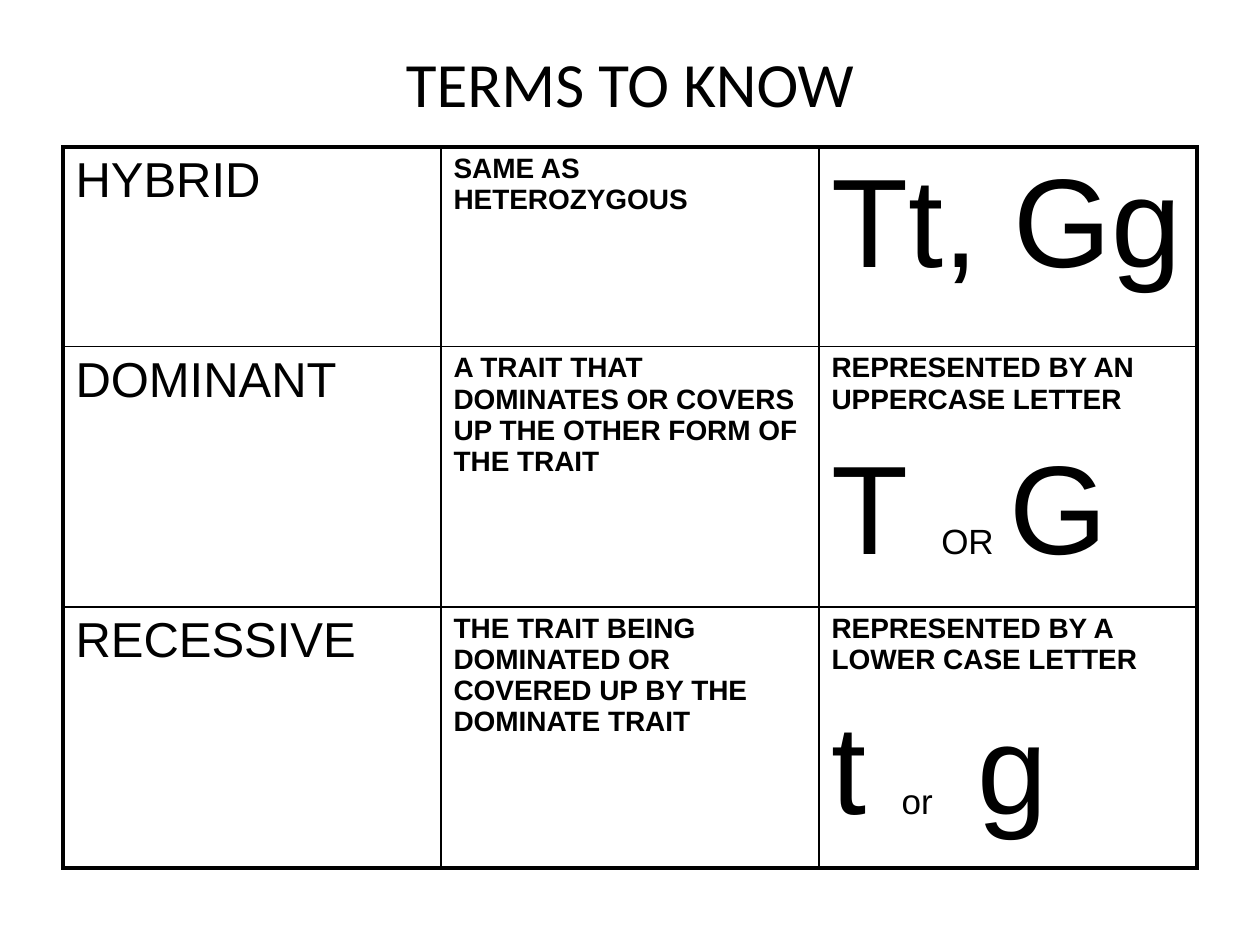
from lxml.etree import fromstring
from pptx import Presentation
from pptx.dml.color import RGBColor
from pptx.enum.text import MSO_ANCHOR, PP_ALIGN
from pptx.oxml.ns import nsdecls
from pptx.util import Pt

COLORS = {"text": "000000", "border": "000000"}
OUTER, INNER = 2.25, 1
TERM = {"size": 28}
MEANING = {"size": 16, "bold": True}
LETTER = {"size": 72}
JOINER = {"size": 20}

# Each cell is a list of paragraphs, each paragraph a list of (text, format).
TERMS = [
    [
        [[("HYBRID", TERM)]],
        [[("SAME AS HETEROZYGOUS", MEANING)]],
        [[("Tt, Gg", LETTER)]],
    ],
    [
        [[("DOMINANT", TERM)]],
        [[("A TRAIT THAT DOMINATES OR COVERS UP THE OTHER FORM OF THE TRAIT", MEANING)]],
        [
            [("REPRESENTED BY AN UPPERCASE LETTER", MEANING)],
            [("T ", LETTER), ("OR", JOINER), (" ", {"size": 32}), ("G", LETTER)],
        ],
    ],
    [
        [[("RECESSIVE", TERM)]],
        [[("THE TRAIT BEING DOMINATED OR COVERED UP BY THE DOMINATE TRAIT", MEANING)]],
        [
            [("REPRESENTED BY A LOWER CASE LETTER", MEANING)],
            [("t ", LETTER), ("or", JOINER), (" ", {"size": 72, "tracking": 5.6}), ("g", LETTER)],
        ],
    ],
]


def add_text(paragraph, text, *, size, font="Arial", bold=False, tracking=0):
    """Append a formatted run; tracking is extra letter spacing in points."""
    run = paragraph.add_run()
    run.text = text
    run.font.name = font
    run.font.size = Pt(size)
    run.font.bold = bold
    run.font.color.rgb = RGBColor.from_string(COLORS["text"])
    if tracking:
        run._r.get_or_add_rPr().set("spc", str(round(tracking * 100)))


def set_borders(cell, widths):
    """Draw the left, right, top and bottom borders, in that order."""
    properties = cell._tc.get_or_add_tcPr()
    for position, (side, width) in enumerate(zip("LRTB", widths)):
        properties.insert(position, fromstring(
            f'<a:ln{side} {nsdecls("a")} w="{Pt(width)}"><a:solidFill>'
            f'<a:srgbClr val="{COLORS["border"]}"/></a:solidFill></a:ln{side}>'
        ))


prs = Presentation()
prs.slide_width, prs.slide_height = Pt(720), Pt(540)
slide = prs.slides.add_slide(prs.slide_layouts[5])

title = slide.shapes.title
title.left, title.top, title.width, title.height = Pt(36), Pt(21.6), Pt(648), Pt(90)
title.text_frame.vertical_anchor = MSO_ANCHOR.TOP
heading = title.text_frame.paragraphs[0]
heading.alignment = PP_ALIGN.CENTER
add_text(heading, "TERMS TO KNOW", size=36, font="Calibri")

row_heights = [114, 149, 149]
terms_table = slide.shapes.add_table(
    3, 3, Pt(36), Pt(84), Pt(648), Pt(sum(row_heights))
).table
terms_table.first_row = False
terms_table.horz_banding = False
for column in terms_table.columns:
    column.width = Pt(216)

for r, (height, term) in enumerate(zip(row_heights, TERMS)):
    terms_table.rows[r].height = Pt(height)
    for c, paragraphs in enumerate(term):
        cell = terms_table.cell(r, c)
        cell.fill.background()
        at_edge = (c == 0, c == 2, r == 0, r == 2)
        set_borders(cell, [OUTER if edge else INNER for edge in at_edge])
        for i, runs in enumerate(paragraphs):
            paragraph = cell.text_frame.add_paragraph() if i else cell.text_frame.paragraphs[0]
            if i:
                paragraph.space_before = Pt(14.4)
            for text, style in runs:
                add_text(paragraph, text, **style)

prs.save("out.pptx")
